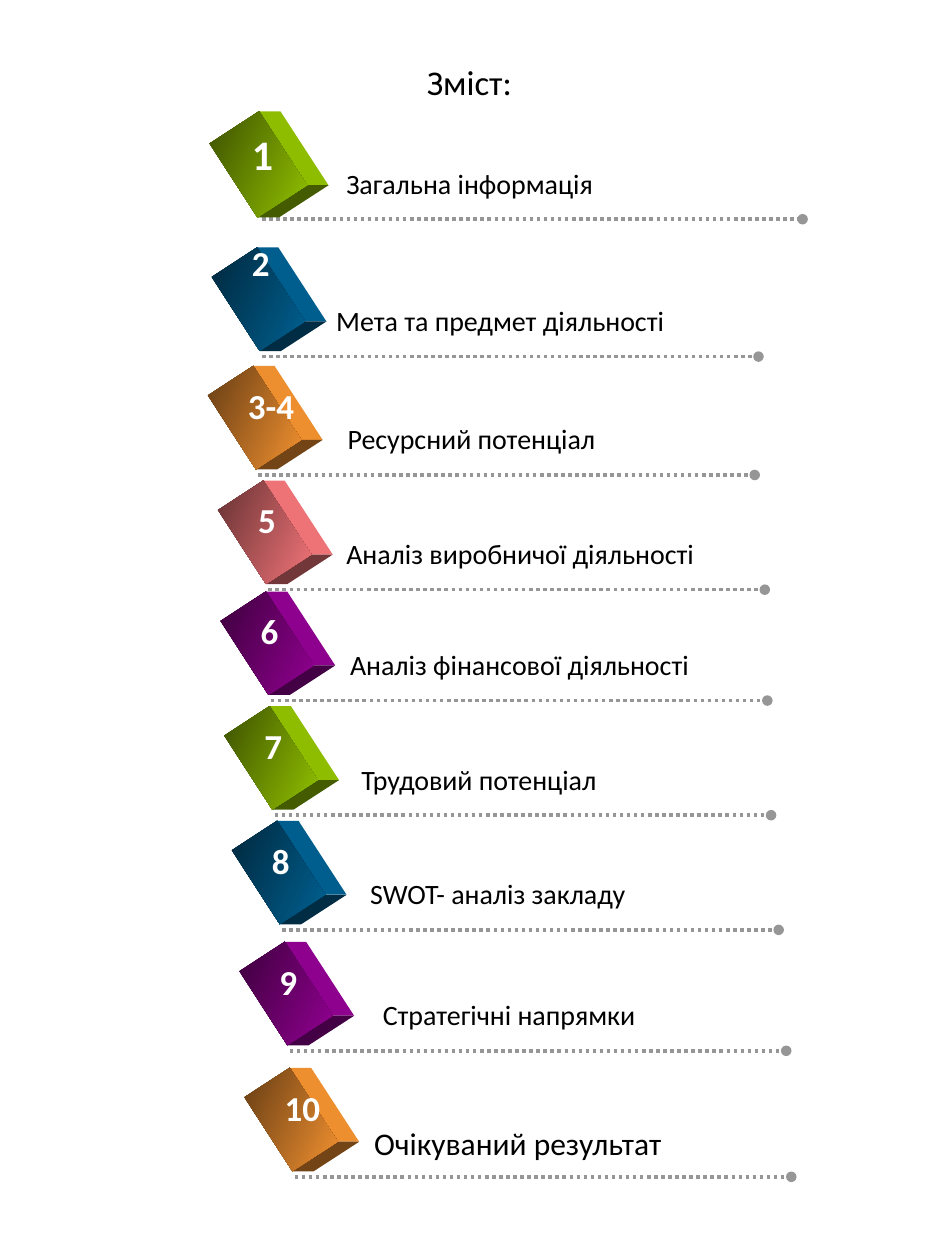
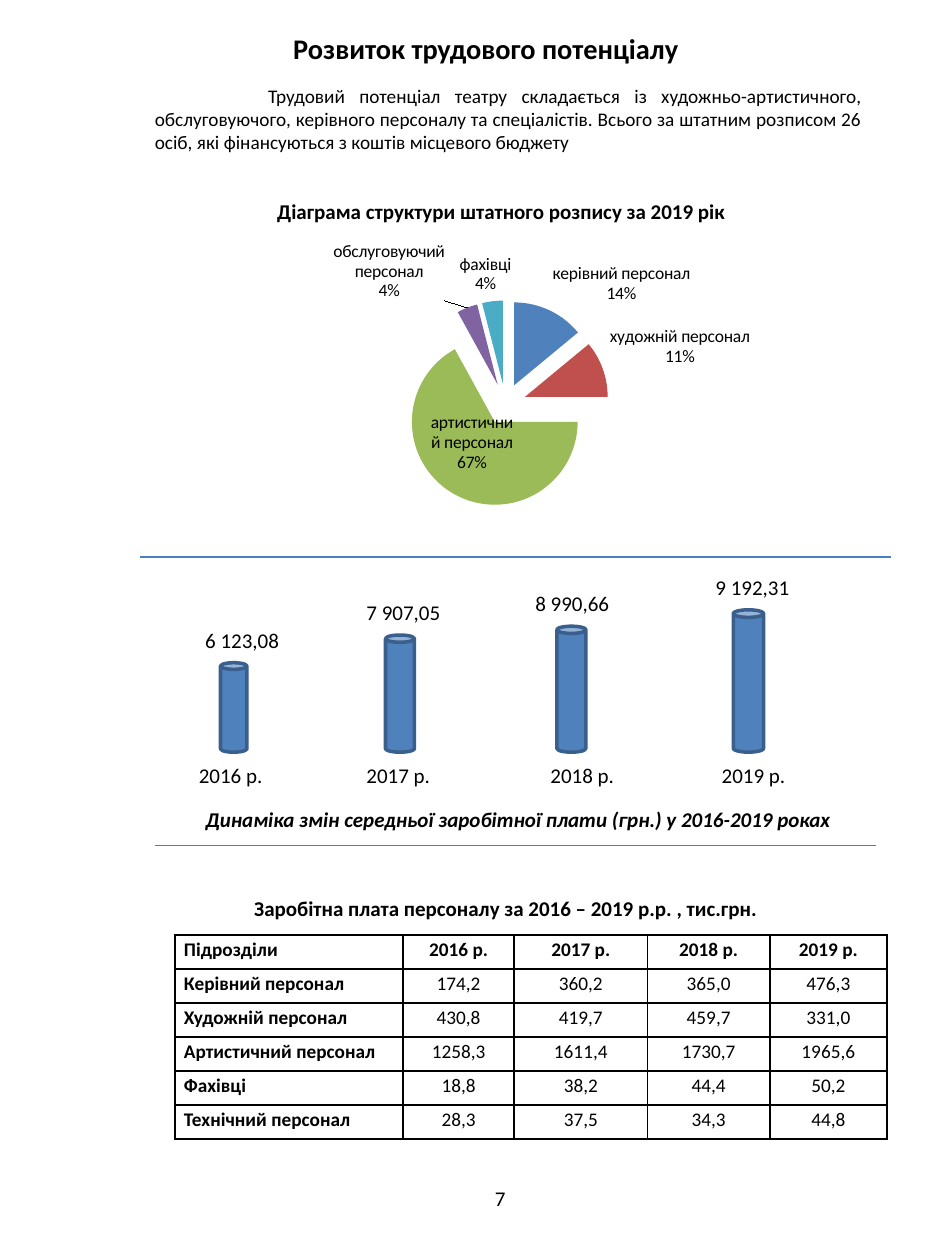
from math import cos, radians, sin

from lxml import etree
from pptx import Presentation
from pptx.chart.data import CategoryChartData
from pptx.dml.color import RGBColor
from pptx.enum.chart import XL_CHART_TYPE as Chart, XL_LABEL_POSITION as Spot
from pptx.enum.dml import MSO_LINE as Dash
from pptx.enum.shapes import MSO_CONNECTOR as Link, MSO_SHAPE as Shape
from pptx.enum.text import MSO_ANCHOR as Anchor, PP_ALIGN as Align
from pptx.oxml.ns import qn
from pptx.util import Inches, Pt

WIDE, HIGH = 7.5, 10
FONT = "Calibri"
HUE = {
    "ink": "000000", "white": "FFFFFF", "dots": "969696",
    "rule": "4B7EBC", "can": "4F81BD", "edge": "3A5F8C",
    "lime": "99CC00", "sea": "006699", "sun": "FF9933",
    "rose": "FF7C80", "plum": "990099",
}

# number, label, cube colour, cube left, cube top, label left, label width
TOPICS = [
    ("1", "Загальна інформація", "lime", 1.70, 1.07, 2.65, 2.23),
    ("2", "Мета та предмет діяльності", "sea", 1.70, 2.16, 2.57, 2.89),
    ("3-4", "Ресурсний потенціал", "sun", 1.67, 3.10, 2.66, 2.19),
    ("5", "Аналіз виробничої діяльності", "rose", 1.75, 4.01, 2.65, 2.99),
    ("6", "Аналіз фінансової діяльності", "plum", 1.77, 4.89, 2.68, 2.92),
    ("7", "Трудовий потенціал", "lime", 1.80, 5.80, 2.77, 2.09),
    ("8", "SWOT- аналіз закладу", "sea", 1.86, 6.71, 2.84, 2.27),
    ("9", "Стратегічні напрямки", "plum", 1.92, 7.67, 2.94, 2.23),
    ("10", "Очікуваний результат", "sun", 1.96, 8.67, 2.87, 2.51),
]
# what departs from the usual row
ODD = {
    "1": {"tall": 0.47, "reach": 4.29, "size": 24, "width": 0.41},
    "2": {"lift": 0.29},
    "3-4": {"width": 0.57},
    "10": {"width": 0.49, "label": 18},
}
USUAL = {"tall": 0.43, "reach": 3.94, "size": 20, "width": 0.34,
         "lift": 0.1, "label": 16}
CUBE, TURN, DEPTH = 0.7, 57, 0.17

INTRO = ("Трудовий потенціал театру складається із художньо-артистичного, "
         "обслуговуючого, керівного персоналу та спеціалістів. Всього за "
         "штатним розписом 26 осіб, які фінансуються з коштів місцевого "
         "бюджету")
STAFF = [
    ("керівний персонал", 14, "4F81BD"),
    ("художній персонал", 11, "C0504D"),
    ("артистичний персонал", 67, "9BBB59"),
    ("обслуговуючий персонал", 4, "8064A2"),
    ("фахівці", 4, "4BACC6"),
]
# year, mean pay, can left, width, height, year left, pay left
PAY = [
    ("2016 р.", "6 123,08", 1.75, 0.21, 0.71, 1.48, 1.53),
    ("2017 р.", "7 907,05", 3.06, 0.23, 0.93, 2.81, 2.81),
    ("2018 р.", "8 990,66", 4.42, 0.23, 1.00, 4.27, 4.15),
    ("2019 р.", "9 192,31", 5.82, 0.24, 1.13, 5.63, 5.58),
]
FLOOR = 5.97
COLS = [1.81, 0.88, 1.06, 0.97, 0.93]
ROW = 0.27
WAGES = [
    ["Підрозділи"] + [item[0] for item in PAY],
    ["Керівний персонал", "174,2", "360,2", "365,0", "476,3"],
    ["Художній персонал", "430,8", "419,7", "459,7", "331,0"],
    ["Артистичний персонал", "1258,3", "1611,4", "1730,7", "1965,6"],
    ["Фахівці", "18,8", "38,2", "44,4", "50,2"],
    ["Технічний персонал", "28,3", "37,5", "34,3", "44,8"],
]


def rgb(name):
    return RGBColor.from_string(HUE.get(name, name))


def shade(name, part):
    """Darken a colour to the given share of its light."""
    return RGBColor(*(int(v * part) for v in rgb(name)))


def inch(*sizes):
    return [Inches(v) for v in sizes]


def sub(top, tag, **attrs):
    return etree.SubElement(top, qn(tag), attrs)


def style(font, size, hue="ink", bold=False, slant=False):
    font.name, font.size = FONT, Pt(size)
    font.bold, font.italic = bold, slant
    font.color.rgb = rgb(hue)


def write(frame, words, size=12, align=Align.LEFT, space=None, **look):
    para = frame.paragraphs[0]
    run = para.add_run()
    run.text = words
    para.alignment, para.line_spacing = align, space
    style(run.font, size, **look)
    return para


def text(shapes, box, words, wrap=True, anchor=Anchor.TOP, **look):
    frame = shapes.add_textbox(*inch(*box)).text_frame
    frame.word_wrap, frame.vertical_anchor = wrap, anchor
    return write(frame, words, **look)


def title(slide, box, words, **look):
    text(slide.shapes, box, words, anchor=Anchor.MIDDLE,
         align=Align.CENTER, **look)


def rule(shapes, left, top, width, hue, weight):
    line = shapes.add_connector(
        Link.STRAIGHT, *inch(left, top, left + width, top))
    line.line.color.rgb, line.line.width = rgb(hue), Pt(weight)
    sub(line._element.spPr, "a:effectLst")
    return line.line


def face(shapes, points, color):
    pts = [tuple(inch(*p)) for p in points]
    pen = shapes.build_freeform(*pts[0], scale=1.0)
    pen.add_line_segments(pts[1:])
    side = pen.convert_to_shape()
    side.shadow.inherit = False
    side.fill.solid()
    side.fill.fore_color.rgb = color
    side.line.fill.background()


def cube(shapes, left, top, tall, hue):
    """Turned front face with a lit right side and a dark underside."""
    tilt = radians(TURN)
    mid = left + CUBE / 2, top + tall / 2

    def corner(along, across):
        x, y = along * CUBE / 2, across * tall / 2
        return (mid[0] + x * cos(tilt) - y * sin(tilt),
                mid[1] + x * sin(tilt) + y * cos(tilt))

    def back(point):
        return point[0] + DEPTH, point[1]

    peak, right, foot = corner(-1, -1), corner(1, -1), corner(1, 1)
    for start, end, part in ((peak, right, 0.93), (foot, right, 0.45)):
        face(shapes, [start, back(start), back(end), end], shade(hue, part))
    front = shapes.add_shape(Shape.RECTANGLE, *inch(left, top, CUBE, tall))
    front.rotation = TURN
    front.shadow.inherit = False
    front.line.fill.background()
    front.fill.gradient()
    front.fill.gradient_angle = 32
    for stop, part in zip(front.fill.gradient_stops, (0.4, 0.95)):
        stop.color.rgb = shade(hue, part)


def topic(slide, mark, label, hue, left, top, start, width):
    odd = {**USUAL, **ODD.get(mark, {})}
    shapes = slide.shapes.add_group_shape().shapes
    line = rule(shapes, left + 0.38, top + 0.67, odd["reach"], "dots", 2)
    line.dash_style = Dash.ROUND_DOT
    sub(line._get_or_add_ln(), "a:tailEnd", type="oval")
    cube(shapes, left, top, odd["tall"], hue)
    text(shapes, (left + 0.2, top - odd["lift"], odd["width"], 0.44), mark,
         wrap=False, size=odd["size"], hue="white", bold=True)
    text(slide.shapes, (start, top + 0.2, width, 0.37), label,
         wrap=False, size=odd["label"])


def layout(top, index, **shares):
    """Fix a chart part at shares of the chart's size."""
    for old in top.findall(qn("c:layout")):
        top.remove(old)
    node = etree.Element(qn("c:layout"))
    top.insert(index, node)
    hand = sub(node, "c:manualLayout")
    if "w" in shares:
        sub(hand, "c:layoutTarget", val="inner")
    for key in ("xMode", "yMode"):
        sub(hand, "c:" + key, val="edge")
    for key, value in shares.items():
        sub(hand, "c:" + key, val=str(value))


def pie(slide):
    data = CategoryChartData()
    data.categories = [item[0] for item in STAFF]
    data.add_series("Series 1", [item[1] for item in STAFF])
    chart = slide.shapes.add_chart(
        Chart.PIE, *inch(1.16, 1.46, 5.94, 2.57), data).chart
    style(chart.font, 10)
    chart.has_legend, chart.has_title = False, True
    head = chart.chart_title
    write(head.text_frame, "Діаграма структури штатного розпису за 2019 рік",
          bold=True)
    layout(head._element, 1, x=0.17, y=0.03)
    layout(chart._chartSpace.chart.plotArea, 0, x=0.07, y=0.36, w=0.82, h=0.64)
    plot = chart.plots[0]
    ser = plot.series[0]
    burst = etree.Element(qn("c:explosion"), val="25")
    ser._element.find(qn("c:tx")).addnext(burst)
    for n, item in enumerate(STAFF):
        fill = ser.points[n].format.fill
        fill.solid()
        fill.fore_color.rgb = rgb(item[2])
    tags = ser.data_labels
    tags.show_category_name = tags.show_percentage = True
    tags.show_value = False
    tags.number_format, tags.number_format_is_linked = "0%", False
    tags.position = Spot.BEST_FIT
    style(tags.font, 10)


def border(cell):
    props = cell._tc.get_or_add_tcPr()
    for n, side in enumerate(("a:lnL", "a:lnR", "a:lnT", "a:lnB")):
        line = etree.Element(qn(side), w=str(Pt(1)))
        sub(sub(line, "a:solidFill"), "a:srgbClr", val=HUE["ink"])
        props.insert(n, line)


def wages(slide):
    grid = slide.shapes.add_table(
        len(WAGES), len(COLS),
        *inch(1.39, 7.42, sum(COLS), ROW * len(WAGES))).table
    grid.first_row = grid.horz_banding = False
    for col, width in zip(grid.columns, COLS):
        col.width = Inches(width)
    for r, row in enumerate(WAGES):
        grid.rows[r].height = Inches(ROW)
        for c, words in enumerate(row):
            cell = grid.cell(r, c)
            cell.margin_left = cell.margin_right = Inches(0.07)
            cell.margin_top = cell.margin_bottom = 0
            cell.fill.background()
            border(cell)
            write(cell.text_frame, words, size=11, space=1.15,
                  bold=r == 0 or c == 0,
                  align=Align.CENTER if c else Align.LEFT)


def contents(slide):
    title(slide, (2.1, 0.45, 3.25, 0.4), "Зміст:", size=19.8)
    for item in TOPICS:
        topic(slide, *item)


def labour(slide):
    shapes = slide.shapes
    title(slide, (0.62, 0.18, 6.47, 0.4), "Розвиток трудового потенціалу",
          size=16.2, bold=True)
    para = text(shapes, (1.13, 0.62, 5.81, 0.66), INTRO, size=11,
                align=Align.JUSTIFY)
    para._p.get_or_add_pPr().set("indent", str(Inches(0.9)))
    pie(slide)
    rule(shapes, 1.11, 4.42, 5.96, "rule", 0.75)
    for year, pay, left, width, tall, below, above in PAY:
        can = shapes.add_shape(
            Shape.CAN, *inch(left, FLOOR - tall, width, tall))
        can.shadow.inherit = False
        can.fill.solid()
        can.fill.fore_color.rgb = rgb("can")
        can.line.color.rgb, can.line.width = rgb("edge"), Pt(2)
        text(shapes, (below, 6, 0.77, 0.3), year)
        text(shapes, (above, FLOOR - tall - 0.33, 0.82, 0.3), pay)
    text(shapes, (1.26, 6.3, 5.71, 0.4),
         "Динаміка змін середньої заробітної плати (грн.) у 2016-2019 роках",
         anchor=Anchor.MIDDLE, align=Align.CENTER, bold=True, slant=True)
    rule(shapes, 1.23, 6.71, 5.72, "rule", 0.75)
    text(shapes, (1.31, 7.06, 5.41, 0.3),
         "Заробітна плата персоналу за 2016 – 2019 р.р. , тис.грн.",
         align=Align.CENTER, bold=True)
    wages(slide)
    text(shapes, (3.83, 9.36, 0.42, 0.3), "7")


def main():
    deck = Presentation()
    deck.slide_width, deck.slide_height = inch(WIDE, HIGH)
    for build in (contents, labour):
        build(deck.slides.add_slide(deck.slide_layouts[6]))
    deck.save("out.pptx")


if __name__ == "__main__":
    main()
